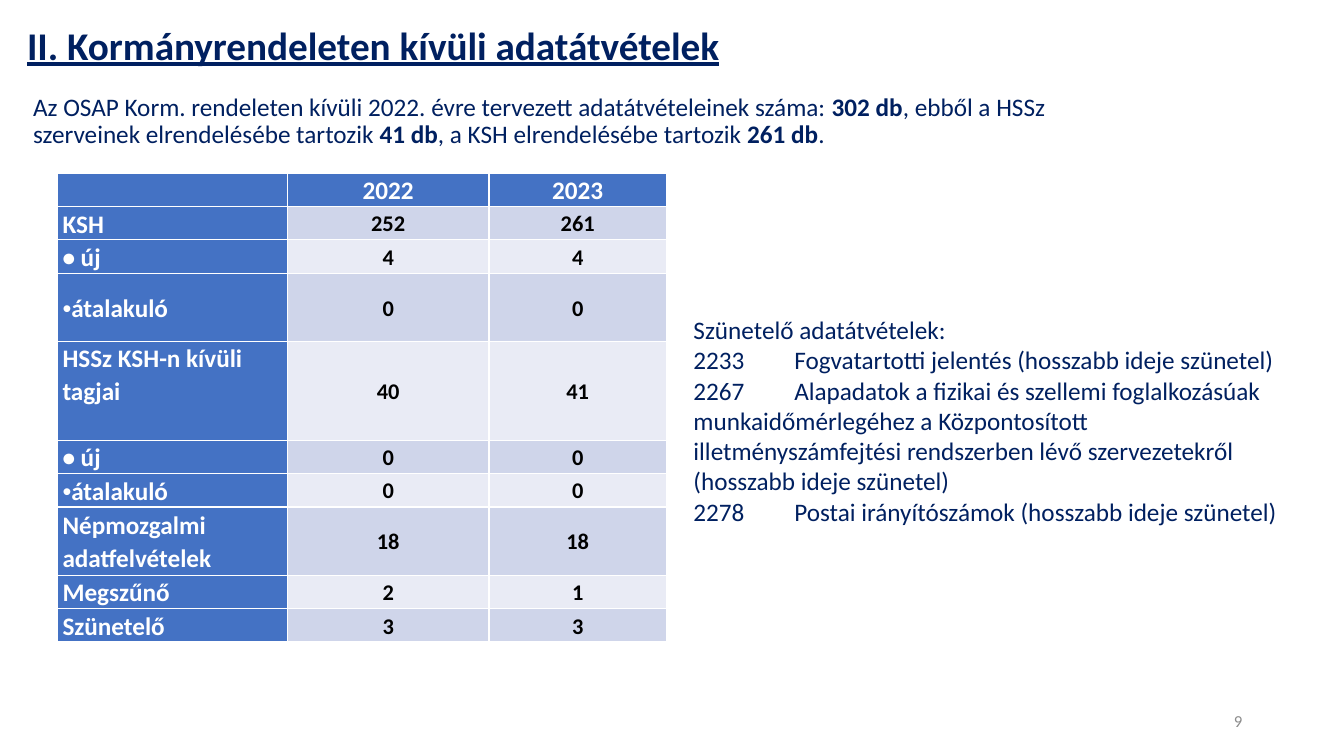
from dataclasses import dataclass

import lxml.etree
import pptx
import pptx.dml.color
import pptx.enum.text
import pptx.oxml.ns
import pptx.util

Inches = pptx.util.Inches
Pt = pptx.util.Pt
RGBColor = pptx.dml.color.RGBColor
Align = pptx.enum.text.PP_ALIGN
Anchor = pptx.enum.text.MSO_ANCHOR

NAVY = RGBColor(0x00, 0x20, 0x60)
GRAY = RGBColor(0x8C, 0x8C, 0x8C)
WHITE = RGBColor(0xFF, 0xFF, 0xFF)
BLACK = RGBColor(0x00, 0x00, 0x00)
HEADER_BLUE = RGBColor(0x44, 0x72, 0xC4)
BANDS = (RGBColor(0xCF, 0xD5, 0xEA), RGBColor(0xE9, 0xEB, 0xF5))
FONT = "Calibri"


@dataclass
class TextBlock:
    left: float
    top: float
    width: float
    height: float
    paragraphs: list[list[str]]  # every second run of a paragraph is bold
    size: int = 18
    color: RGBColor = NAVY
    bold: bool = False
    underline: bool = False
    align: Align = Align.LEFT
    anchor: Anchor = Anchor.TOP
    line_spacing: float = 1.0


@dataclass
class TableRow:
    label: str
    values: tuple[str, str]
    height: float = 0.33
    anchor: Anchor = Anchor.MIDDLE
    bulleted: bool = False


TEXT_BLOCKS = [
    TextBlock(9.42, 6.95, 3, 0.4, [["9"]], size=12, color=GRAY,
              align=Align.RIGHT, anchor=Anchor.MIDDLE),
    TextBlock(0.17, 0.16, 8.33, 0.62, [["II. Kormányrendeleten kívüli adatátvételek"]],
              size=28, bold=True, underline=True, anchor=Anchor.MIDDLE, line_spacing=0.9),
    TextBlock(0.23, 0.89, 10.77, 0.67, [[
        "Az OSAP Korm. rendeleten kívüli 2022. évre tervezett adatátvételeinek száma: ",
        "302 db", ", ebből a HSSz szerveinek elrendelésébe tartozik ",
        "41 db", ", a KSH elrendelésébe tartozik ", "261 db", "."]], line_spacing=0.9),
    TextBlock(6.78, 3.07, 6.06, 2.83, [
        ["Szünetelő adatátvételek:"],
        ["2233\tFogvatartotti jelentés (hosszabb ideje szünetel)"],
        ["2267\tAlapadatok a fizikai és szellemi foglalkozásúak munkaidőmérlegéhez a "
         "Központosított illetményszámfejtési rendszerben lévő szervezetekről "
         "(hosszabb ideje szünetel)"],
        ["2278\tPostai irányítószámok (hosszabb ideje szünetel)"]]),
]

COLUMN_WIDTHS = (2.28, 2.0, 1.76)
TABLE_ROWS = [
    TableRow("", ("2022", "2023"), anchor=Anchor.BOTTOM),
    TableRow("KSH", ("252", "261"), anchor=Anchor.BOTTOM),
    TableRow("• új", ("4", "4")),
    TableRow("átalakuló", ("0", "0"), height=0.68, bulleted=True),
    TableRow("HSSz KSH-n kívüli tagjai", ("40", "41"), height=0.98, anchor=Anchor.TOP),
    TableRow("• új", ("0", "0")),
    TableRow("átalakuló", ("0", "0"), bulleted=True),
    TableRow("Népmozgalmi adatfelvételek", ("18", "18"), height=0.68),
    TableRow("Megszűnő", ("2", "1")),
    TableRow("Szünetelő", ("3", "3"), anchor=Anchor.BOTTOM),
]


def add_text(slide, block: TextBlock) -> None:
    shape = slide.shapes.add_textbox(Inches(block.left), Inches(block.top),
                                     Inches(block.width), Inches(block.height))
    frame = shape.text_frame
    frame.word_wrap = True
    frame.vertical_anchor = block.anchor
    for index, runs in enumerate(block.paragraphs):
        paragraph = frame.paragraphs[0] if index == 0 else frame.add_paragraph()
        paragraph.alignment = block.align
        paragraph.line_spacing = block.line_spacing
        font = paragraph.font
        font.name, font.size = FONT, Pt(block.size)
        font.bold, font.underline = block.bold, block.underline
        font.color.rgb = block.color
        for position, text in enumerate(runs):
            run = paragraph.add_run()
            run.text = text
            if position % 2:
                run.font.bold = True


def add_bullet(paragraph) -> None:
    qn = pptx.oxml.ns.qn
    properties = paragraph._p.get_or_add_pPr()
    properties.set("marL", "0")
    properties.set("indent", str(-Inches(0.31)))
    lxml.etree.SubElement(properties, qn("a:buFont")).set("typeface", "Arial")
    lxml.etree.SubElement(properties, qn("a:buChar")).set("char", "•")


def fill_cell(cell, text: str, fill: RGBColor, color: RGBColor, size: int,
              align: Align, anchor: Anchor, bulleted: bool = False) -> None:
    cell.fill.solid()
    cell.fill.fore_color.rgb = fill
    cell.margin_left = cell.margin_right = Inches(0.05)
    cell.margin_top = cell.margin_bottom = 0
    cell.vertical_anchor = anchor
    cell.text = text
    paragraph = cell.text_frame.paragraphs[0]
    if bulleted:
        add_bullet(paragraph)
    paragraph.alignment = align
    paragraph.line_spacing = 1.07
    font = paragraph.font
    font.name, font.size, font.bold = FONT, Pt(size), True
    font.color.rgb = color


def add_data_table(slide, rows: list[TableRow]) -> None:
    frame = slide.shapes.add_table(
        len(rows), len(COLUMN_WIDTHS), Inches(0.57), Inches(1.72),
        Inches(sum(COLUMN_WIDTHS)), Inches(sum(row.height for row in rows)))
    table = frame.table
    for column, width in zip(table.columns, COLUMN_WIDTHS):
        column.width = Inches(width)
    for index, row in enumerate(rows):
        table.rows[index].height = Inches(row.height)
        fill_cell(table.cell(index, 0), row.label, HEADER_BLUE, WHITE, 18,
                  Align.LEFT, row.anchor, row.bulleted)
        for column, value in enumerate(row.values, start=1):
            cell = table.cell(index, column)
            if index == 0:
                fill_cell(cell, value, HEADER_BLUE, WHITE, 18, Align.CENTER, row.anchor)
            else:
                fill_cell(cell, value, BANDS[(index - 1) % 2], BLACK, 16,
                          Align.CENTER, Anchor.MIDDLE)


def main() -> None:
    presentation = pptx.Presentation()
    presentation.slide_width = Inches(13.33)
    presentation.slide_height = Inches(7.5)
    slide = presentation.slides.add_slide(presentation.slide_layouts[6])

    # Title, introduction, side note and page number
    for block in TEXT_BLOCKS:
        add_text(slide, block)

    # Counts by year
    add_data_table(slide, TABLE_ROWS)

    presentation.save("out.pptx")


if __name__ == "__main__":
    main()
